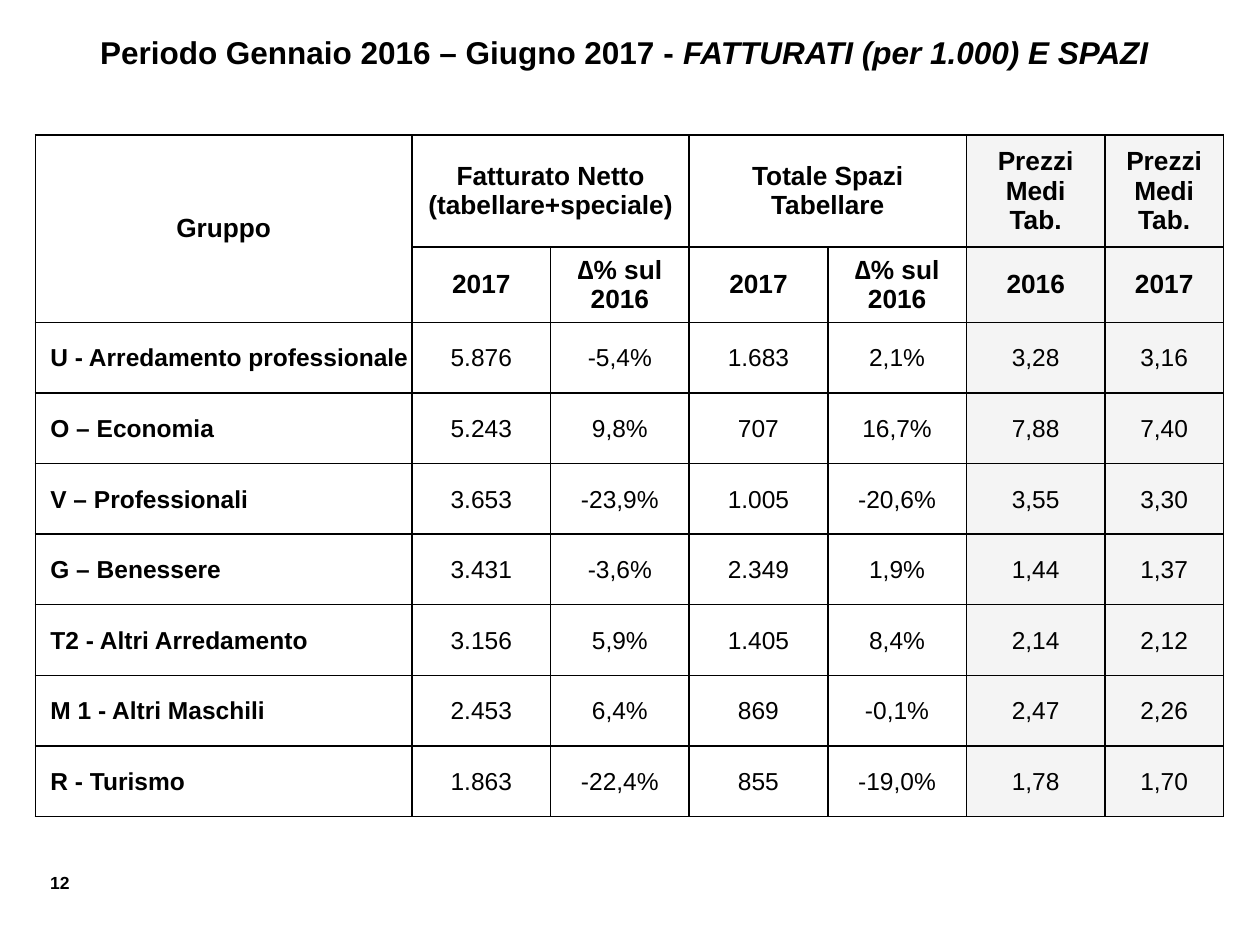
from dataclasses import dataclass

from lxml.etree import SubElement
from pptx import Presentation
from pptx.dml.color import RGBColor
from pptx.enum.text import MSO_ANCHOR, MSO_AUTO_SIZE, PP_ALIGN
from pptx.oxml.ns import qn
from pptx.util import Inches, Pt


@dataclass(frozen=True)
class Theme:
    font: str = "Arial"
    ink: RGBColor = RGBColor(0x00, 0x00, 0x00)
    shade: RGBColor = RGBColor(0xF2, 0xF2, 0xF2)
    shade_opacity: int = 80
    border_width: int = Pt(1)
    title_size: int = Pt(18)
    header_size: int = Pt(15)
    body_size: int = Pt(14)
    number_size: int = Pt(10)


THEME = Theme()

COLUMN_WIDTHS = [2.99] + [1.1] * 5 + [0.94]
ROW_HEIGHTS = [0.89, 0.6] + [0.56] * 7
HEADER_ROWS = 2
FIRST_PRICE_COLUMN = 5
MERGES = [((0, 0), (1, 0)), ((0, 1), (0, 2)), ((0, 3), (0, 4))]
HEADER_MARGINS = (0.1, 0.05, 0.1, 0.05)
LABEL_MARGINS = (0.12, 0.01, 0, 0)
VALUE_MARGINS = (0.01, 0.01, 0.01, 0)

TABLE_ROWS = [
    ["Gruppo", "Fatturato Netto (tabellare+speciale)", "", "Totale Spazi Tabellare", "",
     "Prezzi Medi Tab.", "Prezzi Medi Tab."],
    ["", "2017", "∆% sul 2016", "2017", "∆% sul 2016", "2016", "2017"],
    ["U - Arredamento professionale", "5.876", "-5,4%", "1.683", "2,1%", "3,28", "3,16"],
    ["O – Economia", "5.243", "9,8%", "707", "16,7%", "7,88", "7,40"],
    ["V – Professionali", "3.653", "-23,9%", "1.005", "-20,6%", "3,55", "3,30"],
    ["G – Benessere", "3.431", "-3,6%", "2.349", "1,9%", "1,44", "1,37"],
    ["T2 - Altri Arredamento", "3.156", "5,9%", "1.405", "8,4%", "2,14", "2,12"],
    ["M 1 - Altri Maschili", "2.453", "6,4%", "869", "-0,1%", "2,47", "2,26"],
    ["R - Turismo", "1.863", "-22,4%", "855", "-19,0%", "1,78", "1,70"],
]


def format_font(font, size, bold=True, italic=False):
    font.name = THEME.font
    font.size = size
    font.bold = bold
    font.italic = italic
    font.color.rgb = THEME.ink


def place(box, left, top, width, height):
    box.left, box.top = Inches(left), Inches(top)
    box.width, box.height = Inches(width), Inches(height)


def add_title(page, plain, emphasis):
    title = page.shapes.title
    place(title, 0.27, 0.21, 9.37, 0.71)
    frame = title.text_frame
    frame.word_wrap = True
    frame.auto_size = MSO_AUTO_SIZE.NONE
    frame.vertical_anchor = MSO_ANCHOR.TOP
    para = frame.paragraphs[0]
    para.alignment = PP_ALIGN.CENTER
    for text, italic in ((plain, False), (emphasis, True)):
        span = para.add_run()
        span.text = text
        format_font(span.font, THEME.title_size, italic=italic)


def add_page_number(page, number):
    box = page.shapes.add_textbox(Inches(0.19), Inches(6.87), Inches(0.46), Inches(0.27))
    frame = box.text_frame
    frame.word_wrap = True
    frame.text = number
    para = frame.paragraphs[0]
    para.alignment = PP_ALIGN.RIGHT
    format_font(para.runs[0].font, THEME.number_size)


def add_borders(cell):
    properties = cell._tc.get_or_add_tcPr()
    for side in ("lnL", "lnR", "lnT", "lnB"):
        line = SubElement(properties, qn(f"a:{side}"), w=str(THEME.border_width))
        fill = SubElement(line, qn("a:solidFill"))
        SubElement(fill, qn("a:srgbClr"), val=str(THEME.ink))


def fill_cell(cell, shaded):
    if not shaded:
        cell.fill.background()
        return
    cell.fill.solid()
    cell.fill.fore_color.rgb = THEME.shade
    color = cell._tc.tcPr.find(qn("a:solidFill")).find(qn("a:srgbClr"))
    SubElement(color, qn("a:alpha"), val=str(THEME.shade_opacity * 1000))


def format_cell(cell, text, row, column):
    is_header = row < HEADER_ROWS
    is_label = not is_header and column == 0
    margins = HEADER_MARGINS if is_header else LABEL_MARGINS if is_label else VALUE_MARGINS
    (cell.margin_left, cell.margin_top,
     cell.margin_right, cell.margin_bottom) = map(Inches, margins)
    cell.vertical_anchor = MSO_ANCHOR.MIDDLE
    add_borders(cell)
    fill_cell(cell, column >= FIRST_PRICE_COLUMN)
    cell.text_frame.text = text
    para = cell.text_frame.paragraphs[0]
    para.alignment = PP_ALIGN.LEFT if is_label else PP_ALIGN.CENTER
    size = THEME.header_size if is_header else THEME.body_size
    format_font(para.font, size, bold=is_header or is_label)
    for span in para.runs:
        format_font(span.font, size, bold=is_header or is_label)


def add_sales_table(page):
    frame = page.shapes.add_table(
        len(ROW_HEIGHTS), len(COLUMN_WIDTHS), Inches(0.28), Inches(1.07),
        Inches(sum(COLUMN_WIDTHS)), Inches(sum(ROW_HEIGHTS)))
    table = frame.table
    table.first_row = False
    table.horz_banding = False
    for column, width in zip(table.columns, COLUMN_WIDTHS):
        column.width = Inches(width)
    for row, height in zip(table.rows, ROW_HEIGHTS):
        row.height = Inches(height)
    for row, texts in enumerate(TABLE_ROWS):
        for column, text in enumerate(texts):
            format_cell(table.cell(row, column), text, row, column)
    for first, last in MERGES:
        table.cell(*first).merge(table.cell(*last))


def main():
    deck = Presentation()
    deck.slide_width, deck.slide_height = Inches(10), Inches(7.5)
    page = deck.slides.add_slide(deck.slide_layouts[5])
    add_page_number(page, "12")
    add_title(page, "Periodo Gennaio 2016 – Giugno 2017 - ", "FATTURATI (per 1.000) E SPAZI")
    add_sales_table(page)
    deck.save("out.pptx")


if __name__ == "__main__":
    main()
